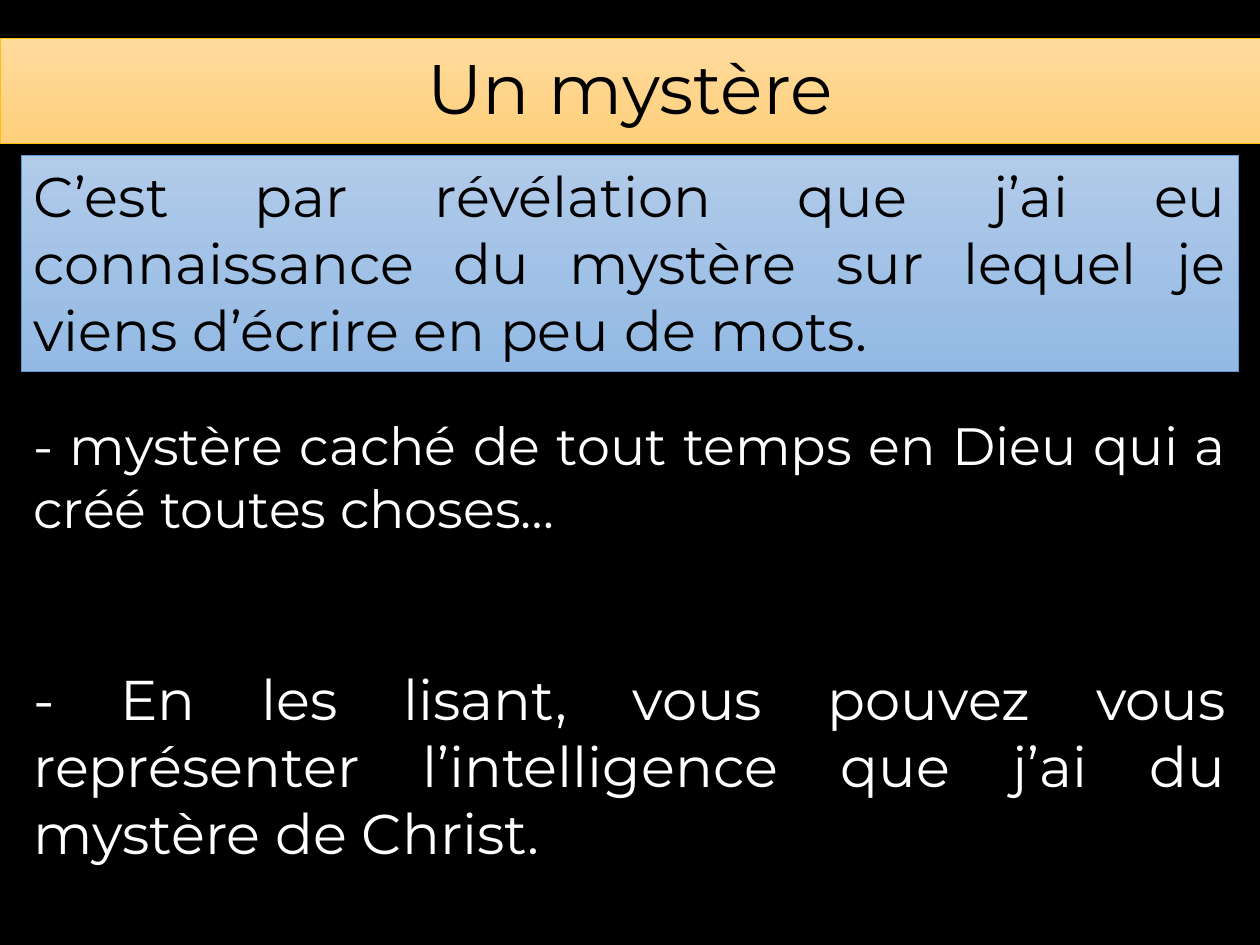
from pptx import Presentation
from pptx import util as u
from pptx.dml.color import RGBColor
from pptx.enum import shapes, text

PX_PER_INCH = 126
FONT = "Montserrat"
BLACK, WHITE = "000000", "FFFFFF"
LEFT, WIDTH = 21, 1218


def px(length):
    return u.Emu(round(length * 914400 / PX_PER_INCH))


def colour(code):
    return RGBColor.from_string(code)


def place(shape, left, top, width, height):
    shape.left, shape.top = px(left), px(top)
    shape.width, shape.height = px(width), px(height)


def paint_panel(shape, top_colour, bottom_colour, line_colour):
    """Vertical gradient with a thin outline."""
    shape.fill.gradient()
    shape.fill.gradient_angle = 270
    for stop, code in zip(shape.fill.gradient_stops, (top_colour, bottom_colour)):
        stop.color.rgb = colour(code)
    shape.line.color.rgb = colour(line_colour)
    shape.line.width = u.Pt(0.5)


def write(shape, words, size, code, align):
    frame = shape.text_frame
    frame.text = words
    frame.word_wrap = True
    frame.auto_size = text.MSO_AUTO_SIZE.SHAPE_TO_FIT_TEXT
    frame.vertical_anchor = text.MSO_ANCHOR.TOP
    para = frame.paragraphs[0]
    para.alignment = align
    font = para.runs[0].font
    font.name, font.size = FONT, u.Pt(size)
    font.color.rgb = colour(code)


def add_title(page, words):
    title = page.shapes.title
    place(title, 0, 38, 1260, 97)
    paint_panel(title, "FFDB9E", "FFD07C", "FFC000")
    write(title, words, 40, BLACK, text.PP_ALIGN.CENTER)


def add_verse(page, words, top, height):
    verse = page.shapes.add_shape(
        shapes.MSO_SHAPE.RECTANGLE, px(LEFT), px(top), px(WIDTH), px(height))
    verse.shadow.inherit = False
    paint_panel(verse, "B1CBE9", "93B9E4", "5B9BD5")
    write(verse, words, 32, BLACK, text.PP_ALIGN.JUSTIFY)


def add_note(page, words, top, height, size):
    note = page.shapes.add_textbox(px(LEFT), px(top), px(WIDTH), px(height))
    write(note, words, size, WHITE, text.PP_ALIGN.JUSTIFY)


def main():
    deck = Presentation()
    deck.slide_width, deck.slide_height = px(1260), px(945)
    page = deck.slides.add_slide(deck.slide_layouts[5])
    page.background.fill.solid()
    page.background.fill.fore_color.rgb = colour(BLACK)

    # Heading and quoted verse
    add_title(page, "Un mystère")
    add_verse(page, "C’est par révélation que j’ai eu connaissance du mystère "
                    "sur lequel je viens d’écrire en peu de mots.", 155, 217)

    # Commentary
    add_note(page, "- mystère caché de tout temps en Dieu qui a créé "
                   "toutes choses…", 407, 140, 30)
    add_note(page, "- En les lisant, vous pouvez vous représenter "
                   "l’intelligence que j’ai du mystère de Christ.", 658, 217, 32)

    deck.save("out.pptx")


if __name__ == "__main__":
    main()
